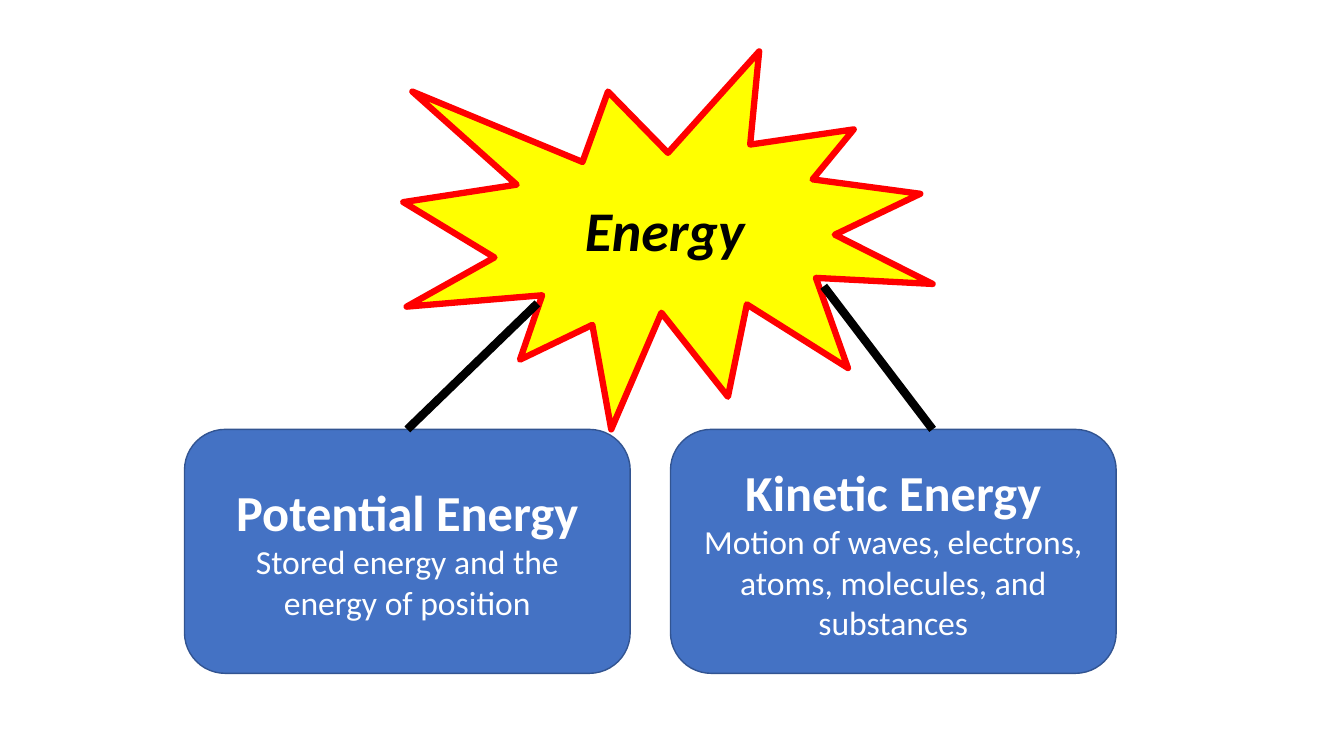
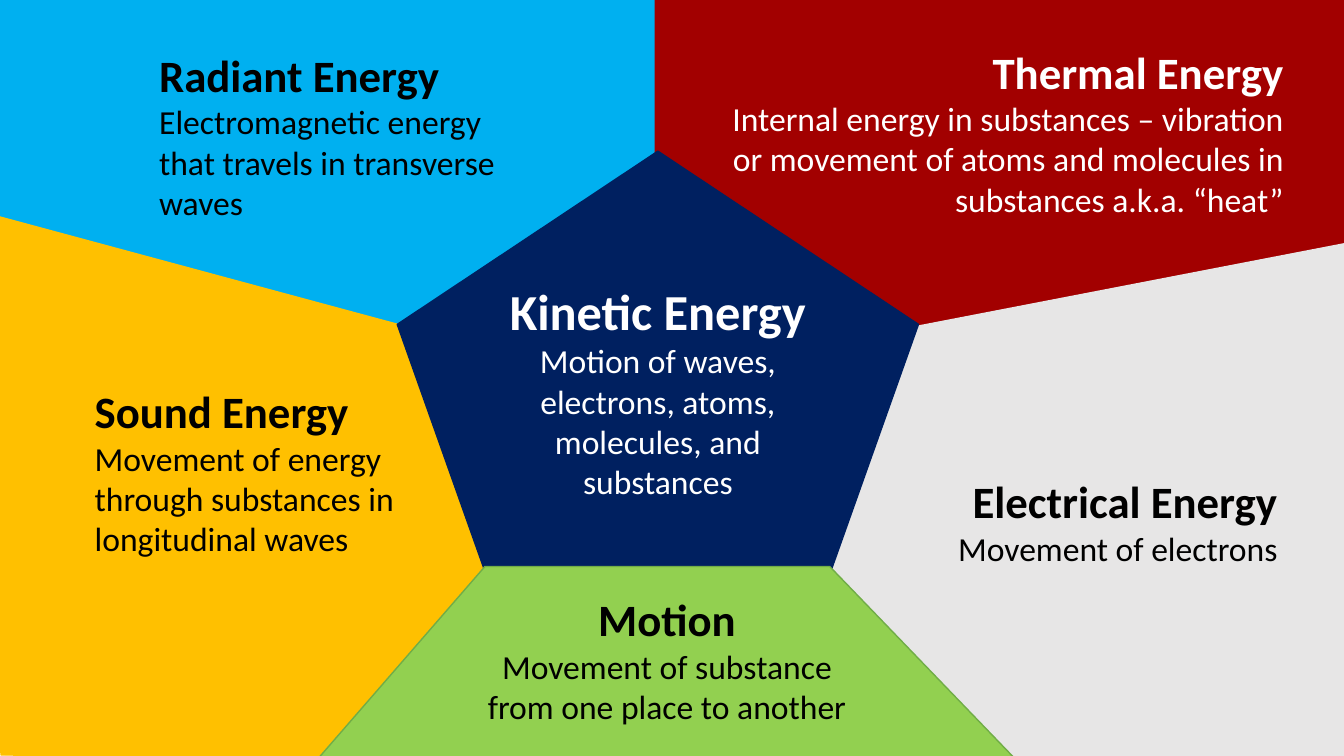
from dataclasses import dataclass

from lxml import etree
from pptx import Presentation
from pptx import util as u
from pptx.dml.color import RGBColor
from pptx.enum import shapes, text
from pptx.oxml import ns

KIND = shapes.MSO_SHAPE
LEFT, MID, RIGHT = (text.PP_ALIGN.LEFT, text.PP_ALIGN.CENTER,
                    text.PP_ALIGN.RIGHT)


@dataclass(frozen=True)
class Theme:
    font: str = "Calibri"
    # Colours
    black: str = "000000"
    white: str = "FFFFFF"
    red: str = "FF0000"
    yellow: str = "FFFF00"
    blue: str = "4472C4"
    edge: str = "325491"
    sky: str = "00B0F0"
    wine: str = "A20000"
    gold: str = "FFC000"
    grey: str = "E7E6E6"
    navy: str = "002060"
    green: str = "92D050"
    leaf: str = "70AD47"
    # Type sizes and line widths in points
    star: int = 40
    head: int = 36
    label: int = 32
    body: int = 24
    thin: float = 1
    rim: float = 4.5
    thick: float = 6


class Deck:
    def __init__(self, theme):
        self.theme = theme
        self.prs = Presentation()
        self.prs.slide_width = u.Inches(13.33)
        self.prs.slide_height = u.Inches(7.5)
        self.slide = None

    def page(self):
        self.slide = self.prs.slides.add_slide(self.prs.slide_layouts[6])

    def paint(self, shape, fill, line=None, width=None):
        shape.shadow.inherit = False
        shape.fill.solid()
        shape.fill.fore_color.rgb = RGBColor.from_string(fill)
        shape.line.color.rgb = RGBColor.from_string(line or fill)
        shape.line.width = u.Pt(width or self.theme.thin)

    def shape(self, kind, box, fill, line=None, width=None):
        item = self.slide.shapes.add_shape(kind, *map(u.Inches, box))
        self.paint(item, fill, line, width)
        return item

    def area(self, points, fill, line=None):
        first, *rest = [(u.Inches(x), u.Inches(y)) for x, y in points]
        form = self.slide.shapes.build_freeform(*first)
        form.add_line_segments(rest, close=True)
        self.paint(form.convert_to_shape(), fill, line)

    def line(self, start, end):
        ends = map(u.Inches, (*start, *end))
        item = self.slide.shapes.add_connector(
            shapes.MSO_CONNECTOR.STRAIGHT, *ends)
        item.line.color.rgb = RGBColor.from_string(self.theme.black)
        item.line.width = u.Pt(self.theme.thick)
        etree.SubElement(item.element.spPr, ns.qn("a:effectLst"))

    def run(self, para, words, size, color, bold=False, italic=False):
        run = para.add_run()
        run.text = words
        font = run.font
        font.name, font.size = self.theme.font, u.Pt(size)
        font.bold, font.italic = bold, italic
        font.color.rgb = RGBColor.from_string(color)

    def label(self, shape, head, body, size, color, align=MID):
        """Put a bold heading with plain text below it into a shape."""
        frame = shape.text_frame
        frame.word_wrap = True
        top, low = frame.paragraphs[0], frame.add_paragraph()
        top.alignment = low.alignment = align
        self.run(top, head, size, color, bold=True)
        self.run(low, body, self.theme.body, color)
        return frame

    def note(self, box, head, body, color, align):
        item = self.slide.shapes.add_textbox(*map(u.Inches, box))
        frame = self.label(item, head, body, self.theme.label, color, align)
        frame.auto_size = text.MSO_AUTO_SIZE.SHAPE_TO_FIT_TEXT


KINETIC = ("Kinetic Energy",
           "Motion of waves, electrons, atoms, molecules, and substances")


def forms(deck):
    """The two forms of energy."""
    look = deck.theme
    deck.page()

    # Starburst
    star = deck.shape(KIND.EXPLOSION1, (4, 0.51, 5.25, 3.75),
                      look.yellow, look.red, look.rim)
    star.text_frame.word_wrap = True
    para = star.text_frame.paragraphs[0]
    para.alignment = MID
    deck.run(para, "Energy", look.star, look.black, bold=True, italic=True)

    # Pair of boxes
    wide, gap = 4.42, 0.4
    pair = [("Potential Energy", "Stored energy and the energy of position"),
            KINETIC]
    for i, words in enumerate(pair):
        box = deck.shape(KIND.ROUNDED_RECTANGLE,
                         (1.83 + i * (wide + gap), 4.26, wide, 2.42),
                         look.blue, look.edge)
        deck.label(box, *words, look.head, look.white)

    # Links from the starburst
    deck.line((5.33, 3.01), (4.04, 4.26))
    deck.line((8.17, 2.84), (9.25, 4.26))


def kinds(deck):
    """Five kinds of kinetic energy around a pentagon."""
    look = deck.theme
    deck.page()

    # Coloured fields
    deck.shape(KIND.RECTANGLE, (0, 0, 6.5, 3.75), look.sky)
    deck.area([(6.5, 0), (13.43, 0), (13.42, 2.74), (6.5, 3.76)], look.wine)
    deck.area([(-0.01, 2.15), (3.99, 3.23), (5.56, 7.53), (0.01, 7.49)],
              look.gold)
    deck.area([(8.1, 3.43), (13.43, 2.4), (13.36, 7.54), (8.07, 7.5)],
              look.grey)

    # Centre, with its text raised by a deep bottom inset
    core = deck.shape(KIND.REGULAR_PENTAGON, (3.94, 1.5, 5.17, 4.5),
                      look.navy)
    frame = deck.label(core, *KINETIC, look.head, look.white)
    frame.margin_bottom = u.Inches(0.86)

    deck.area([(4.81, 5.62), (8.23, 5.62), (10.07, 7.53), (3.16, 7.52)],
              look.green, look.leaf)

    # Labels
    notes = [
        ((9.39, 4.65, 3.38, 1.35), "Electrical Energy",
         "Movement of electrons", look.black, RIGHT),
        ((4.72, 5.82, 3.79, 1.75), "Motion",
         "Movement of substance from one place to another",
         look.black, MID),
        ((0.84, 3.76, 3.41, 2.15), "Sound Energy",
         "Movement of energy through substances in longitudinal waves",
         look.black, LEFT),
        ((1.48, 0.42, 3.67, 2.15), "Radiant Energy",
         "Electromagnetic energy that travels in transverse waves",
         look.black, LEFT),
        ((6.9, 0.39, 5.93, 2.15), "Thermal Energy",
         "Internal energy in substances – vibration or movement of atoms "
         "and molecules in substances a.k.a. “heat”", look.white, RIGHT),
    ]
    for note in notes:
        deck.note(*note)


def main():
    deck = Deck(Theme())
    forms(deck)
    kinds(deck)
    deck.prs.save("out.pptx")


if __name__ == "__main__":
    main()
